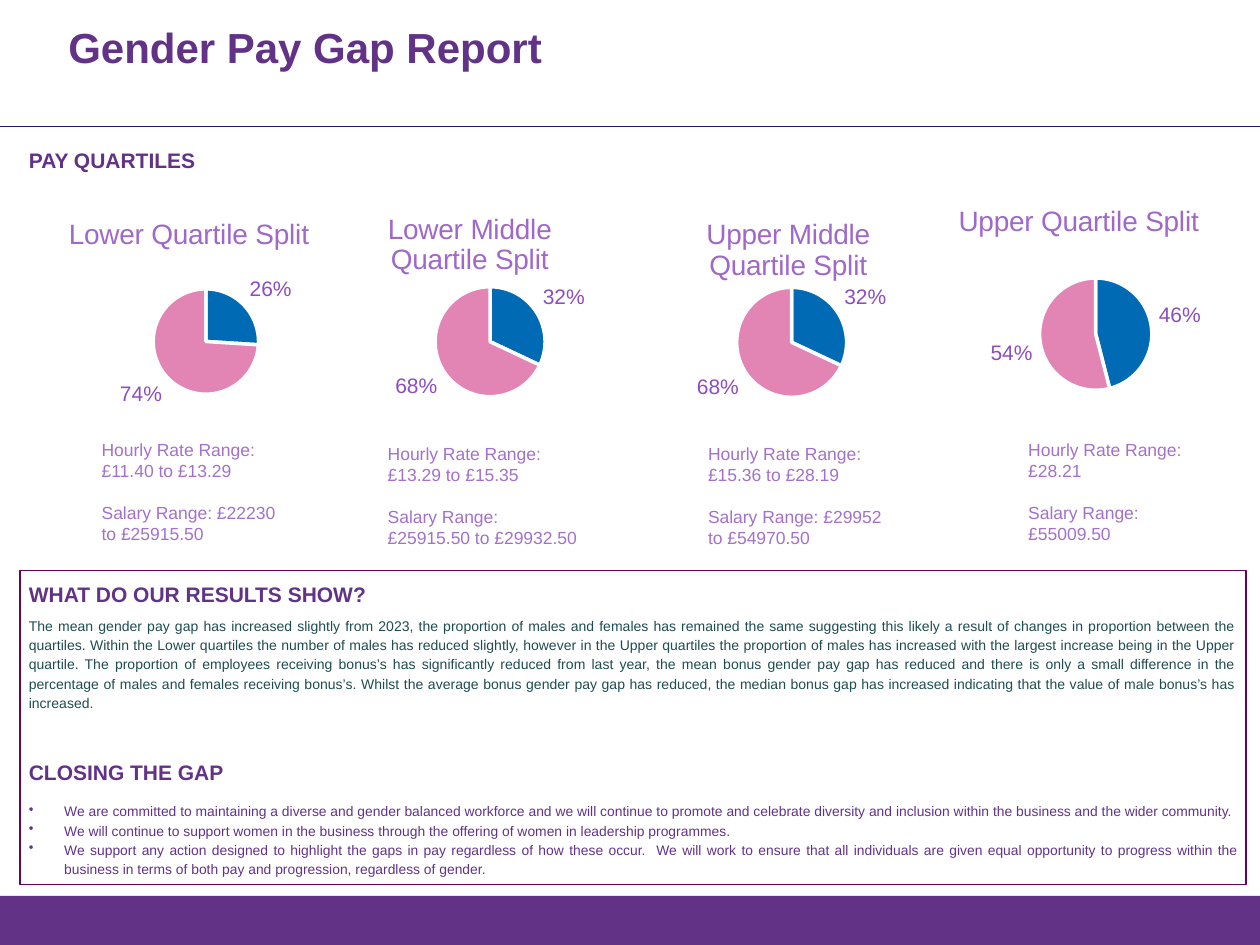
"""Gender pay gap slide with four pay quartile pies and the commentary below."""
from lxml.etree import SubElement
from pptx import Presentation
from pptx.chart.data import CategoryChartData
from pptx.dml.color import RGBColor
from pptx.enum.chart import XL_CHART_TYPE as ChartType, XL_LABEL_POSITION as LabelPos
from pptx.enum.shapes import MSO_CONNECTOR as Connector, MSO_SHAPE as Shape
from pptx.enum.text import MSO_ANCHOR as Anchor, PP_ALIGN as Align
from pptx.oxml import parse_xml
from pptx.oxml.ns import nsdecls, qn
from pptx.util import Pt

PURPLE, LILAC, TITLE_LILAC, LABEL = "623287", "A371CA", "A068C9", "8C4DBD"
BLUE, PINK, TEAL, FRAME, RULE = "006AB4", "E284B4", "1E4C50", "650260", "1D155F"


def style(font, size, color, bold=False):
    font.name, font.size, font.bold = "Arial", Pt(size), bold
    font.color.rgb = RGBColor.from_string(color)


def set_margins(frame, left, top):
    frame.margin_left = frame.margin_right = Pt(left)
    frame.margin_top = frame.margin_bottom = Pt(top)
    frame.word_wrap = True


prs = Presentation()
prs.slide_width, prs.slide_height = Pt(720), Pt(540)
slide = prs.slides.add_slide(prs.slide_layouts[5])
shapes = slide.shapes

footer = shapes.add_shape(Shape.RECTANGLE, Pt(0), Pt(512), Pt(720), Pt(28))
footer.shadow.inherit = False
footer.fill.solid()
footer.fill.fore_color.rgb = RGBColor.from_string(PURPLE)
footer.line.fill.background()

rule = shapes.add_connector(Connector.STRAIGHT, Pt(0), Pt(72), Pt(720), Pt(72))
rule.line.color.rgb = RGBColor.from_string(RULE)
rule.line.width = Pt(0.25)
SubElement(rule._element.spPr, qn("a:effectLst"))

title = shapes.title
title.left, title.top, title.width, title.height = Pt(39), Pt(16), Pt(283), Pt(24.5)
set_margins(title.text_frame, 0, 0)
title.text_frame.vertical_anchor = Anchor.MIDDLE
heading = title.text_frame.paragraphs[0]
heading.alignment, heading.line_spacing = Align.LEFT, 0.9
run = heading.add_run()
run.text = "Gender Pay Gap Report"
style(run.font, 24, PURPLE, True)

section = shapes.add_textbox(Pt(11.5), Pt(81.5), Pt(209), Pt(20)).text_frame
set_margins(section, 5, 3)
section.vertical_anchor = Anchor.MIDDLE
run = section.paragraphs[0].add_run()
run.text = "PAY QUARTILES"
style(run.font, 12, PURPLE, True)

results = shapes.add_shape(Shape.RECTANGLE, Pt(11.5), Pt(326), Pt(700.5), Pt(179.5))
results.shadow.inherit = False
results.fill.background()
results.line.color.rgb = RGBColor.from_string(FRAME)
results.line.width = Pt(0.75)
commentary = results.text_frame
set_margins(commentary, 5, 3)
commentary.vertical_anchor = Anchor.MIDDLE

findings = (
    "The mean gender pay gap has increased slightly from 2023, the proportion of males and females "
    "has remained the same suggesting this likely a result of changes in proportion between the "
    "quartiles. Within the Lower quartiles the number of males has reduced slightly, however in the "
    "Upper quartiles the proportion of males has increased with the largest increase being in the "
    "Upper quartile. The proportion of employees receiving bonus’s has significantly reduced from "
    "last year, the mean bonus gender pay gap has reduced and there is only a small difference in "
    "the percentage of males and females receiving bonus’s. Whilst the average bonus gender pay gap "
    "has reduced, the median bonus gap has increased indicating that the value of male bonus’s has "
    "increased.")
commitments = [
    "We are committed to maintaining a diverse and gender balanced workforce and we will continue to "
    "promote and celebrate diversity and inclusion within the business and the wider community.",
    "We will continue to support women in the business through the offering of women in leadership "
    "programmes.",
    "We support any action designed to highlight the gaps in pay regardless of how these occur.  We "
    "will work to ensure that all individuals are given equal opportunity to progress within the "
    "business in terms of both pay and progression, regardless of gender."]
passages = [
    ("WHAT DO OUR RESULTS SHOW?", 12, PURPLE, True, 1.15, 0, 4.5, False),
    (findings, 8, TEAL, False, 1.15, 0, 4.5, False),
    ("CLOSING THE GAP", 12, PURPLE, True, 1.2, 20.4, 9, False),
] + [(text, 7.9, PURPLE, False, 1.15, 0, 0, True) for text in commitments]

for i, (text, size, color, bold, spacing, before, after, bulleted) in enumerate(passages):
    para = commentary.add_paragraph() if i else commentary.paragraphs[0]
    para.alignment, para.line_spacing = Align.JUSTIFY, spacing
    para.space_before, para.space_after = Pt(before), Pt(after)
    if bulleted:
        props = para._p.get_or_add_pPr()
        props.set("marL", str(Pt(20.25)))
        props.set("indent", str(-Pt(20.25)))
        SubElement(props, qn("a:buChar"), char="•")
    run = para.add_run()
    run.text = text
    style(run.font, size, color, bold)

quartiles = [
    ("Lower", (0.26, 0.74), (11.5, 114), (0.21, 0.39, 0.68, 0.46),
     "£11.40 to £13.29", "£22230 to £25915.50", (51, 235.5, 114.5)),
    ("Lower Middle", (0.32, 0.68), (172, 111.5), (0.12, 0.4, 0.88, 0.48),
     "£13.29 to £15.35", "£25915.50 to £29932.50", (214.5, 237.5, 124.5)),
    ("Upper Middle", (0.32, 0.68), (354, 114.5), (0.06, 0.38, 0.9, 0.48),
     "£15.36 to £28.19", "£29952 to £54970.50", (397.5, 237.5, 117.5)),
    ("Upper", (0.46, 0.54), (520, 106.5), (0.19, 0.4, 0.72, 0.49),
     "£28.21", "£55009.50", (580.5, 235.5, 107.5)),
]
for name, shares, (left, top), plot_box, hourly, salary, (text_left, text_top, text_width) in quartiles:
    ranges = shapes.add_textbox(Pt(text_left), Pt(text_top), Pt(text_width), Pt(80)).text_frame
    set_margins(ranges, 7.2, 3.6)
    ranges.margin_top = Pt(15.6)
    for i, text in enumerate((f"Hourly Rate Range: {hourly}", f"Salary Range: {salary}")):
        para = ranges.add_paragraph() if i else ranges.paragraphs[0]
        para.space_before = Pt(12 * i)
        run = para.add_run()
        run.text = text
        style(run.font, 10, LILAC)

    data = CategoryChartData(number_format="0%")
    data.categories = ["1", "2"]
    data.add_series("Series 1", shares)
    chart = shapes.add_chart(ChartType.PIE, Pt(left), Pt(top), Pt(193), Pt(131), data).chart
    style(chart.font, 10, PURPLE)
    chart.has_legend = False
    chart.has_title = True
    run = chart.chart_title.text_frame.paragraphs[0].add_run()
    run.text = f"{name} Quartile Split"
    style(run.font, 16, TITLE_LILAC)

    plot = chart.plots[0]
    plot.vary_by_categories = True
    for i, color in enumerate((BLUE, PINK)):
        slice_format = plot.series[0].points[i].format
        slice_format.fill.solid()
        slice_format.fill.fore_color.rgb = RGBColor.from_string(color)
        slice_format.line.color.rgb = RGBColor.from_string("FFFFFF")
        slice_format.line.width = Pt(2)
    labels = plot.series[0].data_labels
    labels.show_value = True
    labels.number_format, labels.number_format_is_linked = "0%", False
    labels.position = LabelPos.OUTSIDE_END
    style(labels.font, 12, LABEL)

    plot_area = chart._chartSpace.chart.plotArea
    for layout in plot_area.findall(qn("c:layout")):
        plot_area.remove(layout)
    sizes = "".join(f'<c:{key} val="{value}"/>' for key, value in zip("xywh", plot_box))
    plot_area.insert(0, parse_xml(
        f'<c:layout {nsdecls("c")}><c:manualLayout><c:layoutTarget val="inner"/>'
        f'<c:xMode val="edge"/><c:yMode val="edge"/>{sizes}</c:manualLayout></c:layout>'))

prs.save("out.pptx")
